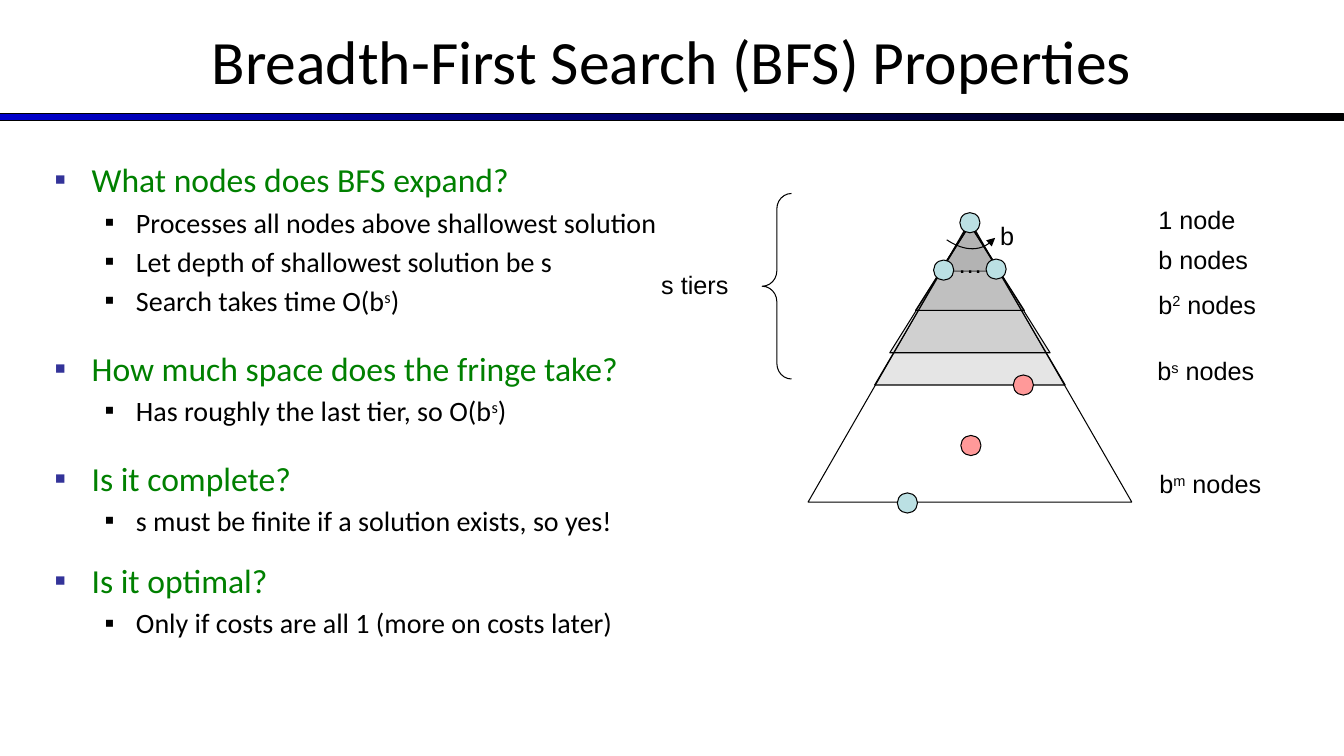
from lxml import etree
from pptx import Presentation
from pptx.dml.color import RGBColor as RGB
from pptx.enum.shapes import MSO_SHAPE as SHAPE
from pptx.enum.text import MSO_ANCHOR as ANCHOR, PP_ALIGN as ALIGN
from pptx.oxml.ns import qn
from pptx.util import Inches, Pt

INK = {"black": "000000", "blue": "0000CC", "navy": "333399", "green": "008000",
       "gray": "808080", "teal": "BBE0E3", "pink": "FF9999"}


def tint(name):
    return RGB.from_string(INK[name])


def sub(parent, tag, **attrs):
    return etree.SubElement(parent, qn(tag), attrs)


def write(para, text, size=18, font="Arial", color="black", align=None, before=0):
    """Fill a paragraph; parts between ^ marks are raised."""
    para.alignment = align
    para.space_before = Pt(before)
    for i, part in enumerate(text.split("^")):
        if not part:
            continue
        run = para.add_run()
        run.text = part
        run.font.size = Pt(size)
        run.font.name = font
        run.font.color.rgb = tint(color)
        if i % 2:
            run.font._element.set("baseline", "30000")


def add_box(slide, x, y, w, h):
    frame = slide.shapes.add_textbox(Inches(x), Inches(y), Inches(w), Inches(h)).text_frame
    frame.word_wrap = True
    return frame


def label(slide, text, x, y, w):
    write(add_box(slide, x, y, w, 0.4).paragraphs[0], text)


def style(shape, fill=None, alpha=None):
    shape.shadow.inherit = False
    shape.line.color.rgb = tint("black")
    shape.line.width = Pt(0.75)
    if fill is None:
        shape.fill.background()
        return
    shape.fill.solid()
    shape.fill.fore_color.rgb = tint(fill)
    if alpha:
        color = shape._element.spPr.find(qn("a:solidFill"))[0]
        sub(color, "a:alpha", val=str(alpha * 1000))


def trace(slide, points, close=True):
    spots = [(Inches(x), Inches(y)) for x, y in points]
    pen = slide.shapes.build_freeform(*spots[0])
    pen.add_line_segments(spots[1:], close=close)
    return pen.convert_to_shape()


def header(slide, w, h):
    title = slide.shapes.title
    title.left, title.top = 0, Inches(-0.03)
    title.width, title.height = Inches(w), Inches(h)
    title.text_frame.vertical_anchor = ANCHOR.MIDDLE
    write(title.text_frame.paragraphs[0], "Breadth-First Search (BFS) Properties",
          size=44, font="Calibri", align=ALIGN.CENTER)
    bar = slide.shapes.add_shape(SHAPE.RECTANGLE, 0, Inches(1.13), Inches(w), Inches(0.07))
    style(bar, "blue")
    bar.fill.gradient()
    bar.fill.gradient_angle = 0
    for stop, name in zip(bar.fill.gradient_stops, ("blue", "black")):
        stop.color.rgb = tint(name)


def bullet(para, level, color):
    left, hang = ((0.37, 0.37), (0.81, 0.31))[level]
    para.level = level
    props = para._p.get_or_add_pPr()
    props.set("marL", str(Inches(left)))
    props.set("indent", str(-Inches(hang)))
    sub(sub(props, "a:buClr"), "a:srgbClr", val=INK[color])
    sub(props, "a:buFont", typeface="Arial")
    sub(props, "a:buChar", char="▪")


def outline(slide, x, y, w, h):
    topics = [
        ("What nodes does BFS expand?", 4.8,
         ["Processes all nodes above shallowest solution",
          "Let depth of shallowest solution be s",
          "Search takes time O(b^s^)"]),
        ("How much space does the fringe take?", 21.8,
         ["Has roughly the last tier, so O(b^s^)"]),
        ("Is it complete?", 21.8, ["s must be finite if a solution exists, so yes!"]),
        ("Is it optimal?", 16.2, ["Only if costs are all 1 (more on costs later)"]),
    ]
    frame = add_box(slide, x, y, w, h)
    para = frame.paragraphs[0]
    for ask, gap, replies in topics:
        if para is None:
            para = frame.add_paragraph()
        write(para, ask, size=24, font="Calibri", color="green", before=gap)
        bullet(para, 0, "navy")
        for reply in replies:
            para = frame.add_paragraph()
            write(para, reply, size=20, font="Calibri", before=4)
            bullet(para, 1, "black")
        para = None


def arc(slide, x, y):
    """Draw the arrow that sweeps across the branches."""
    p = [(-0.23, 0.17), (-0.11, 0.25), (0.09, 0.33), (0.25, 0.15)]
    points = []
    for i in range(17):
        t = i / 16
        mix = ((1 - t) ** 3, 3 * t * (1 - t) ** 2, 3 * t * t * (1 - t), t ** 3)
        points.append((x + sum(m * a for m, (a, _) in zip(mix, p)),
                       y + sum(m * b for m, (_, b) in zip(mix, p))))
    curve = trace(slide, points, close=False)
    style(curve)
    sub(curve._element.spPr.find(qn("a:ln")), "a:tailEnd", type="triangle")


def tree(slide, x, y):
    """Draw the search tree with its apex at x, y."""
    tiers = [(0.02, 0.3, 0.48), (0, 0.945, 1.61), (0.02, 0.795, 1.29),
             (0.02, 0.54, 0.87), (-0.02, 1.605, 2.77)]
    for top, half, base in tiers:
        wedge = trace(slide, [(x, y + top), (x - half, y + base), (x + half, y + base)])
        if top < 0:
            style(wedge)
        else:
            style(wedge, "gray", alpha=20)
    label(slide, "…", x - 0.22, y + 0.2, 0.3)
    arc(slide, x, y)
    label(slide, "b", x + 0.2, y - 0.07, 0.33)
    nodes = [(0, 0, "teal"), (-0.26, 0.47, "teal"), (0.26, 0.46, "teal"),
             (-0.62, 2.78, "teal"), (0.53, 1.61, "pink"), (0.01, 2.21, "pink")]
    size = 0.2
    for dx, dy, color in nodes:
        dot = slide.shapes.add_shape(SHAPE.OVAL, Inches(x + dx - size / 2),
                                     Inches(y + dy - size / 2), Inches(size), Inches(size))
        style(dot, color)


def counts(slide, x, y):
    rows = [("1 node", 0.01, 0), ("b nodes", 0.01, 0.39), ("b^2^ nodes", 0.01, 0.84),
            ("b^s^ nodes", 0, 1.5), ("b^m^ nodes", 0.02, 2.62)]
    for text, dx, dy in rows:
        label(slide, text, x + dx, y + dy, 1.6)


def depth(slide, x, y, h):
    label(slide, "s tiers", x, y + 0.7, 1.38)
    brace = slide.shapes.add_shape(SHAPE.LEFT_BRACE, Inches(x + 1.1), Inches(y),
                                   Inches(0.29), Inches(h))
    brace.adjustments[0] = 0.53
    style(brace)


def main():
    deck = Presentation()
    deck.slide_width, deck.slide_height = Inches(13.33), Inches(7.5)
    slide = deck.slides.add_slide(deck.slide_layouts[5])
    header(slide, 13.33, 1.25)
    outline(slide, 0.44, 1.53, 6.22, 5.17)
    tree(slide, 9.62, 2.21)
    counts(slide, 11.38, 1.98)
    depth(slide, 6.46, 1.92, 1.84)
    deck.save("out.pptx")


if __name__ == "__main__":
    main()
